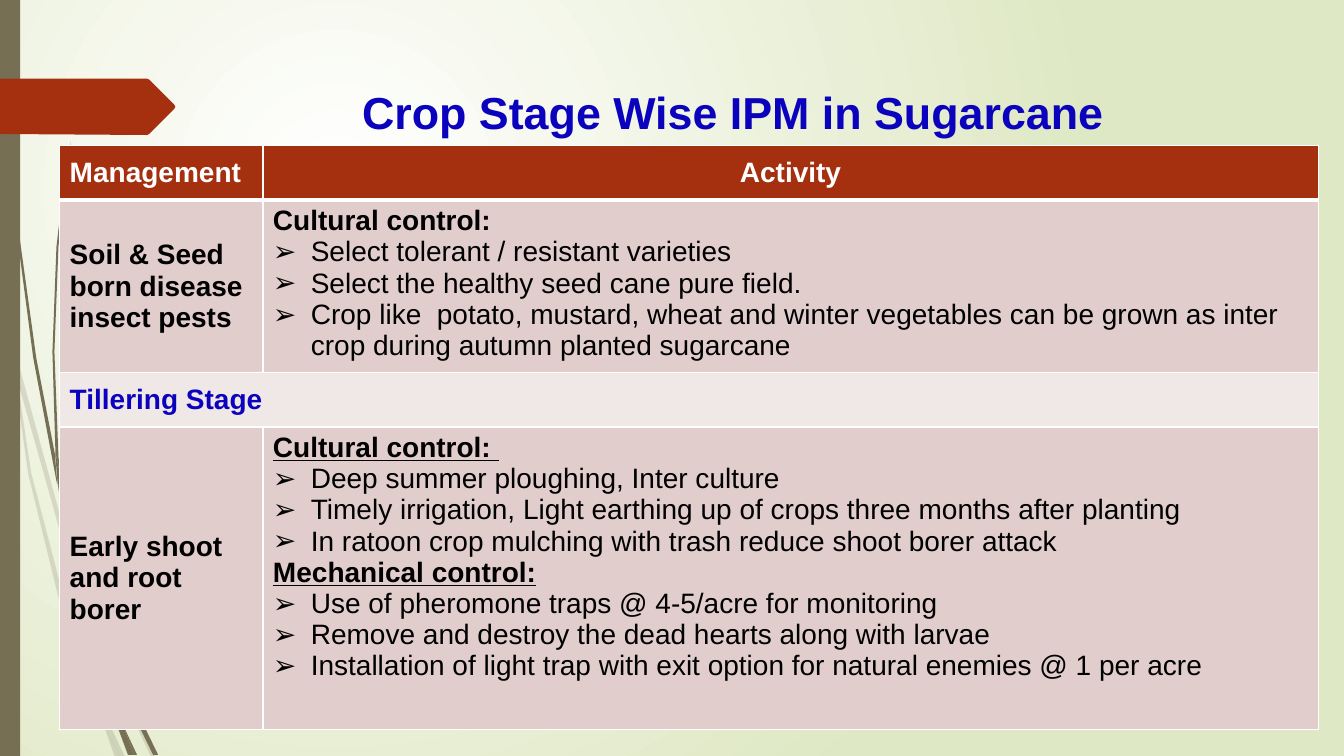
from lxml.etree import SubElement as Sub
from pptx import Presentation
from pptx.dml.color import RGBColor as Rgb
from pptx.enum.shapes import MSO_SHAPE as Kind
from pptx.enum.text import MSO_ANCHOR as Anchor, PP_ALIGN as Align
from pptx.oxml.ns import qn
from pptx.util import Pt

RUST, OLIVE, BLUE = "A53010", "766F54", "0B02BE"
ROSE, PALE, WHITE, BLACK = "E1CDCC", "F0E8E7", "FFFFFF", "000000"
UNIT = Pt(0.72)

FAINT = [
    [(11, 350), (9, 322), (0, 282), (0, 299), (10, 344)],
    [(58, 522), (84, 599), (85, 586), (62, 520), (14, 345), (17, 376)],
    [(92, 607), (88, 596), (88, 610), (123, 694), (150, 751), (155, 751),
     (127, 692)],
    [(119, 751), (124, 751), (105, 711)],
    [(93, 683), (70, 619), (31, 469), (17, 376), (11, 350), (28, 470),
     (65, 621), (92, 693), (101, 714), (99, 707)],
    [(101, 714), (114, 751), (119, 751)],
    [(96, 692), (93, 683), (99, 707), (101, 714), (119, 751), (105, 711)],
]
DARK = [
    [(7, 110), (17, 233), (33, 355), (56, 477), (57, 481), (55, 457),
     (55, 453), (36, 355), (19, 232), (8, 109), (5, 48), (4, 0), (3, 0),
     (4, 48)],
    [(113, 649), (110, 641), (111, 656), (132, 708), (152, 749), (157, 749),
     (136, 706)],
    [(110, 691), (98, 657), (72, 556), (64, 505), (57, 477), (68, 557),
     (93, 659), (111, 708), (117, 722), (116, 717)],
    [(60, 472), (58, 453), (54, 349), (58, 245), (63, 193), (70, 141),
     (62, 193), (56, 245), (52, 349), (55, 449)],
    [(133, 749), (136, 749), (122, 719)],
    [(57, 477), (64, 505), (60, 472), (55, 449), (55, 453)],
    [(117, 722), (127, 749), (131, 749)],
    [(116, 706), (110, 691), (116, 717), (117, 722), (130, 749), (133, 749),
     (122, 719)],
]
ARROW = [(0, 78), (146, 78), (148, 79), (173, 104), (174, 106), (173, 108),
         (148, 133), (146, 134), (0, 133)]

HEADS = ["Management", "Activity"]
SOIL = [
    ("head", "Cultural control:"),
    ("item", "Select tolerant / resistant varieties"),
    ("item", "Select the healthy seed cane pure field."),
    ("item", "Crop like  potato, mustard, wheat and winter vegetables can be "
             "grown as inter crop during autumn planted sugarcane"),
]
BORER = [
    ("under", "Cultural control: "),
    ("item", "Deep summer ploughing, Inter culture"),
    ("item", "Timely irrigation, Light earthing up of crops three months "
             "after planting"),
    ("item", "In ratoon crop mulching with trash reduce shoot borer attack"),
    ("under", "Mechanical control:"),
    ("item", "Use of pheromone traps @ 4-5/acre for monitoring"),
    ("item", "Remove and destroy the dead hearts along with larvae"),
    ("item", "Installation of light trap with exit option for natural "
             "enemies @ 1 per acre"),
]


def paint(fill, tint):
    fill.solid()
    fill.fore_color.rgb = Rgb.from_string(tint)


def shade(slide):
    fill = slide.background.fill
    fill.gradient()
    for stop, tint in zip(fill.gradient_stops, [WHITE, "DFE8C4"]):
        stop.color.rgb = Rgb.from_string(tint)
    grad = slide.element.find(".//" + qn("a:gradFill"))
    grad.remove(grad.find(qn("a:lin")))
    ring = Sub(grad, qn("a:path"), {"path": "circle"})
    Sub(ring, qn("a:fillToRect"),
        {"l": "50000", "t": "50000", "r": "100000", "b": "100000"})


def finish(shape, tint):
    paint(shape.fill, tint)
    shape.line.fill.background()
    shape.shadow.inherit = False


def outline(slide, dots, tint, alpha=100):
    pen = slide.shapes.build_freeform(*dots[0], scale=UNIT)
    pen.add_line_segments(dots[1:], close=True)
    shape = pen.convert_to_shape()
    finish(shape, tint)
    if alpha < 100:
        hue = shape.element.spPr.find(".//" + qn("a:srgbClr"))
        Sub(hue, qn("a:alpha"), {"val": str(alpha * 1000)})


def write(para, text, tint, size=20, bold=True, under=False):
    run = para.add_run()
    run.text = text
    font = run.font
    font.name, font.size = "Arial", Pt(size)
    font.bold, font.underline = bold, under
    font.color.rgb = Rgb.from_string(tint)


def bullet(para):
    props = para._p.get_or_add_pPr()
    props.set("marL", str(Pt(27)))
    props.set("indent", str(-Pt(27)))
    Sub(props, qn("a:buFont"), {"typeface": "Arial"})
    Sub(props, qn("a:buChar"), {"char": "➢"})


def border(cell, foot):
    props = cell._tc.get_or_add_tcPr()
    for spot, side in enumerate("LRTB"):
        wide = foot if side == "B" else 1
        line = Sub(props, qn("a:ln" + side), {"w": str(Pt(wide))})
        solid = Sub(line, qn("a:solidFill"))
        Sub(solid, qn("a:srgbClr"), {"val": WHITE})
        props.insert(spot, line)


def label(cell, text, tint, align=Align.LEFT):
    cell.vertical_anchor = Anchor.MIDDLE
    para = cell.text_frame.paragraphs[0]
    para.alignment = align
    write(para, text, tint)


def advise(cell, lines):
    frame = cell.text_frame
    for spot, (kind, text) in enumerate(lines):
        para = frame.add_paragraph() if spot else frame.paragraphs[0]
        if kind == "item":
            bullet(para)
        write(para, text, BLACK, bold=kind != "item", under=kind == "under")


def grid(slide):
    table = slide.shapes.add_table(
        4, 2, Pt(42.6), Pt(104), Pt(899), Pt(417)).table
    table.horz_banding = False
    for col, wide in zip(table.columns, [145.2, 753.8]):
        col.width = Pt(wide)
    for row, tall in zip(table.rows, [39, 123, 39, 216]):
        row.height = Pt(tall)
    for row, tint in zip(table.rows, [RUST, ROSE, PALE, ROSE]):
        for cell in row.cells:
            paint(cell.fill, tint)
            border(cell, 3 if tint == RUST else 1)
    table.cell(2, 0).merge(table.cell(2, 1))
    label(table.cell(0, 0), HEADS[0], WHITE)
    label(table.cell(0, 1), HEADS[1], WHITE, Align.CENTER)
    label(table.cell(1, 0), "Soil & Seed born disease insect pests", BLACK)
    advise(table.cell(1, 1), SOIL)
    label(table.cell(2, 0), "Tillering Stage", BLUE)
    label(table.cell(3, 0), "Early shoot and root borer", BLACK)
    advise(table.cell(3, 1), BORER)


def head(slide, text):
    title = slide.shapes.title
    title.left, title.top = Pt(121.7), Pt(53.3)
    title.width, title.height = Pt(804.2), Pt(53.3)
    frame = title.text_frame
    frame.vertical_anchor = Anchor.MIDDLE
    para = frame.paragraphs[0]
    para.alignment = Align.CENTER
    write(para, text, BLUE, size=32)
    slide.shapes._spTree.append(title.element)


def main():
    deck = Presentation()
    deck.slide_width, deck.slide_height = Pt(960), Pt(540)
    slide = deck.slides.add_slide(deck.slide_layouts[5])
    shade(slide)
    for wisp in FAINT:
        outline(slide, wisp, OLIVE, 20)
    for wisp in DARK:
        outline(slide, wisp, OLIVE)
    bar = slide.shapes.add_shape(Kind.RECTANGLE, 0, 0, Pt(14.4), Pt(540))
    finish(bar, OLIVE)
    outline(slide, ARROW, RUST)
    head(slide, "Crop Stage Wise IPM in Sugarcane")
    grid(slide)
    deck.save("out.pptx")


if __name__ == "__main__":
    main()
